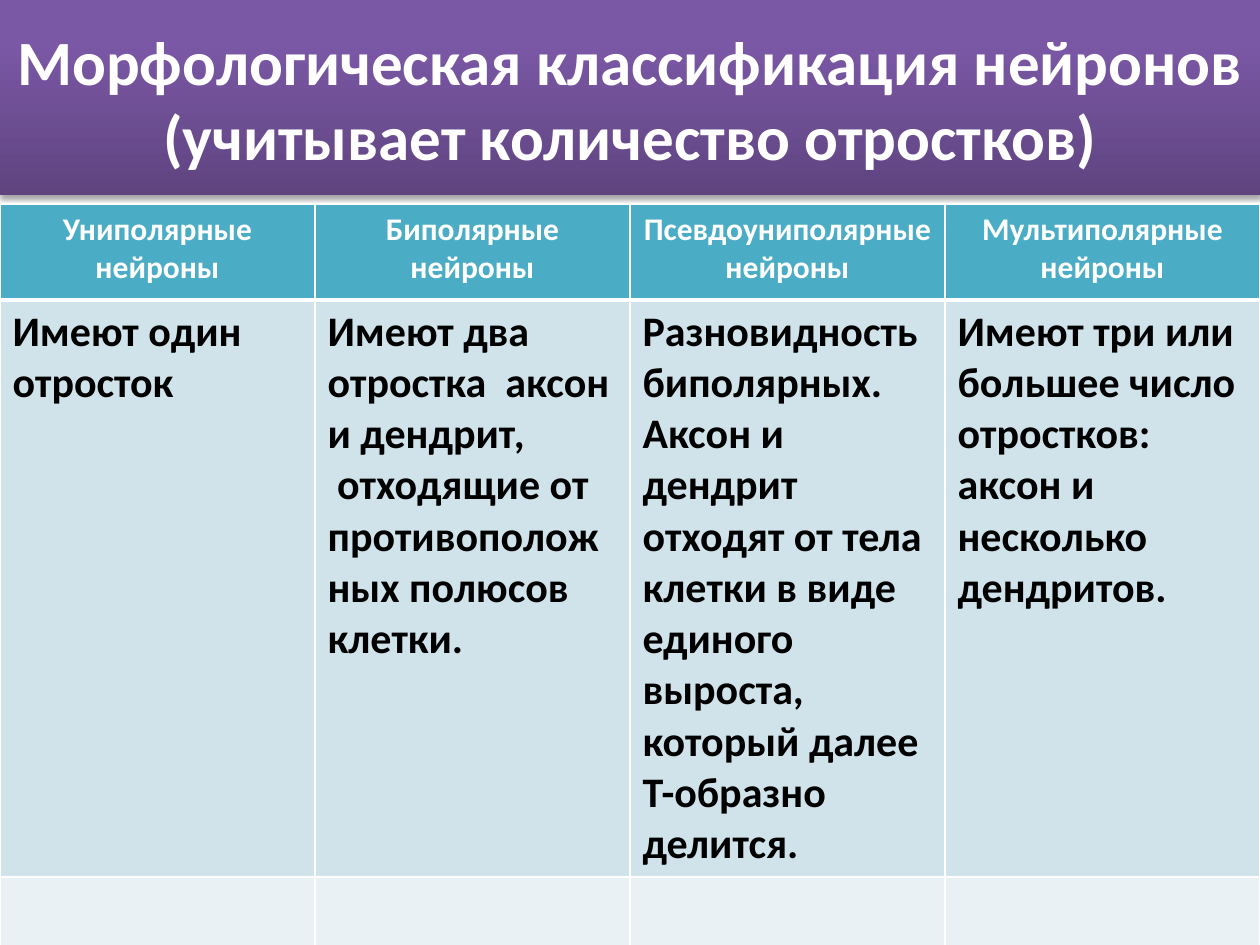
from copy import deepcopy

from lxml.etree import SubElement
from pptx import Presentation
from pptx.dml.color import RGBColor
from pptx.enum.shapes import MSO_SHAPE
from pptx.enum.text import MSO_ANCHOR, PP_ALIGN
from pptx.oxml.ns import qn
from pptx.util import Inches, Pt

WHITE = RGBColor(0xFF, 0xFF, 0xFF)
BLACK = RGBColor(0, 0, 0)
TEAL = RGBColor(0x4B, 0xAC, 0xC6)
PALE = RGBColor(0xD0, 0xE3, 0xEA)
LIGHT = RGBColor(0xE9, 0xF1, 0xF5)
STOPS = [
    (0, RGBColor(0x5F, 0x44, 0x80)),
    (0.8, RGBColor(0x7B, 0x58, 0xA6)),
    (1, RGBColor(0x7C, 0x57, 0xA8)),
]

FONT = "Calibri"
TITLE = "Морфологическая классификация нейронов (учитывает количество отростков)"
HEADS = ["Униполярные", "Биполярные", "Псевдоуниполярные", "Мультиполярные"]
NOTES = [
    "Имеют один отросток",
    "Имеют два отростка  аксон и дендрит,\n отходящие от противоположных полюсов клетки.",
    "Разновидность биполярных. Аксон и дендрит отходят от тела клетки "
    "в виде единого выроста, который далее Т-образно делится.",
    "Имеют три или большее число отростков: аксон и несколько дендритов.",
]
ROWS = [
    (0.76, TEAL, [f"{head} нейроны" for head in HEADS], 18, WHITE, PP_ALIGN.CENTER),
    (4.58, PALE, NOTES, 24, BLACK, PP_ALIGN.LEFT),
    (2.64, LIGHT, [""] * len(HEADS), 18, BLACK, PP_ALIGN.LEFT),
]


def write(frame, text, size, color, align):
    """Put one bold paragraph into a text frame."""
    para = frame.paragraphs[0]
    para.text = text
    para.alignment = align
    font = para.font
    font.name, font.size, font.bold = FONT, Pt(size), True
    font.color.rgb = color


def shade(shape):
    """Give a shape the upward gradient and a soft shadow below."""
    fill = shape.fill
    fill.gradient()
    fill.gradient_angle = 90
    props = shape.element.spPr
    stops = props.find(".//" + qn("a:gsLst"))
    stops.append(deepcopy(stops[-1]))
    for stop, (place, color) in zip(fill.gradient_stops, STOPS):
        stop.position = place
        stop.color.rgb = color
    shape.shadow.inherit = False
    cast = SubElement(
        props.find(qn("a:effectLst")), qn("a:outerShdw"),
        blurRad=str(Pt(3.1)), dist=str(Pt(1.8)), dir="5400000", rotWithShape="0",
    )
    tint = SubElement(cast, qn("a:srgbClr"), val=str(BLACK))
    SubElement(tint, qn("a:alpha"), val="35000")


def add_title(slide):
    """Draw the title band."""
    band = slide.shapes.add_shape(
        MSO_SHAPE.RECTANGLE, Inches(0), Inches(0), Inches(10), Inches(1.55)
    )
    band.line.fill.background()
    shade(band)
    frame = band.text_frame
    frame.word_wrap = True
    frame.vertical_anchor = MSO_ANCHOR.MIDDLE
    write(frame, TITLE, 36, WHITE, PP_ALIGN.CENTER)


def add_edges(cell, top, bottom):
    """Draw white borders around a cell, with widths in points."""
    props = cell._tc.get_or_add_tcPr()
    widths = {"a:lnL": 1, "a:lnR": 1, "a:lnT": top, "a:lnB": bottom}
    for place, (tag, width) in enumerate(widths.items()):
        line = props.makeelement(qn(tag), w=str(Pt(width)))
        fill = SubElement(line, qn("a:solidFill"))
        SubElement(fill, qn("a:srgbClr"), val=str(WHITE))
        props.insert(place, line)


def add_grid(slide):
    """Draw the table of neuron types."""
    total = sum(row[0] for row in ROWS)
    table = slide.shapes.add_table(
        len(ROWS), len(HEADS), Inches(0), Inches(1.62), Inches(10), Inches(total)
    ).table
    for r, (height, fill, texts, size, color, align) in enumerate(ROWS):
        table.rows[r].height = Inches(height)
        for c, text in enumerate(texts):
            cell = table.cell(r, c)
            cell.fill.solid()
            cell.fill.fore_color.rgb = fill
            add_edges(cell, 3 if r == 1 else 1, 3 if r == 0 else 1)
            write(cell.text_frame, text, size, color, align)


def main():
    """Build and save the slide."""
    deck = Presentation()
    deck.slide_width, deck.slide_height = Inches(10), Inches(7.5)
    slide = deck.slides.add_slide(deck.slide_layouts[6])
    add_title(slide)
    add_grid(slide)
    deck.save("out.pptx")


if __name__ == "__main__":
    main()
